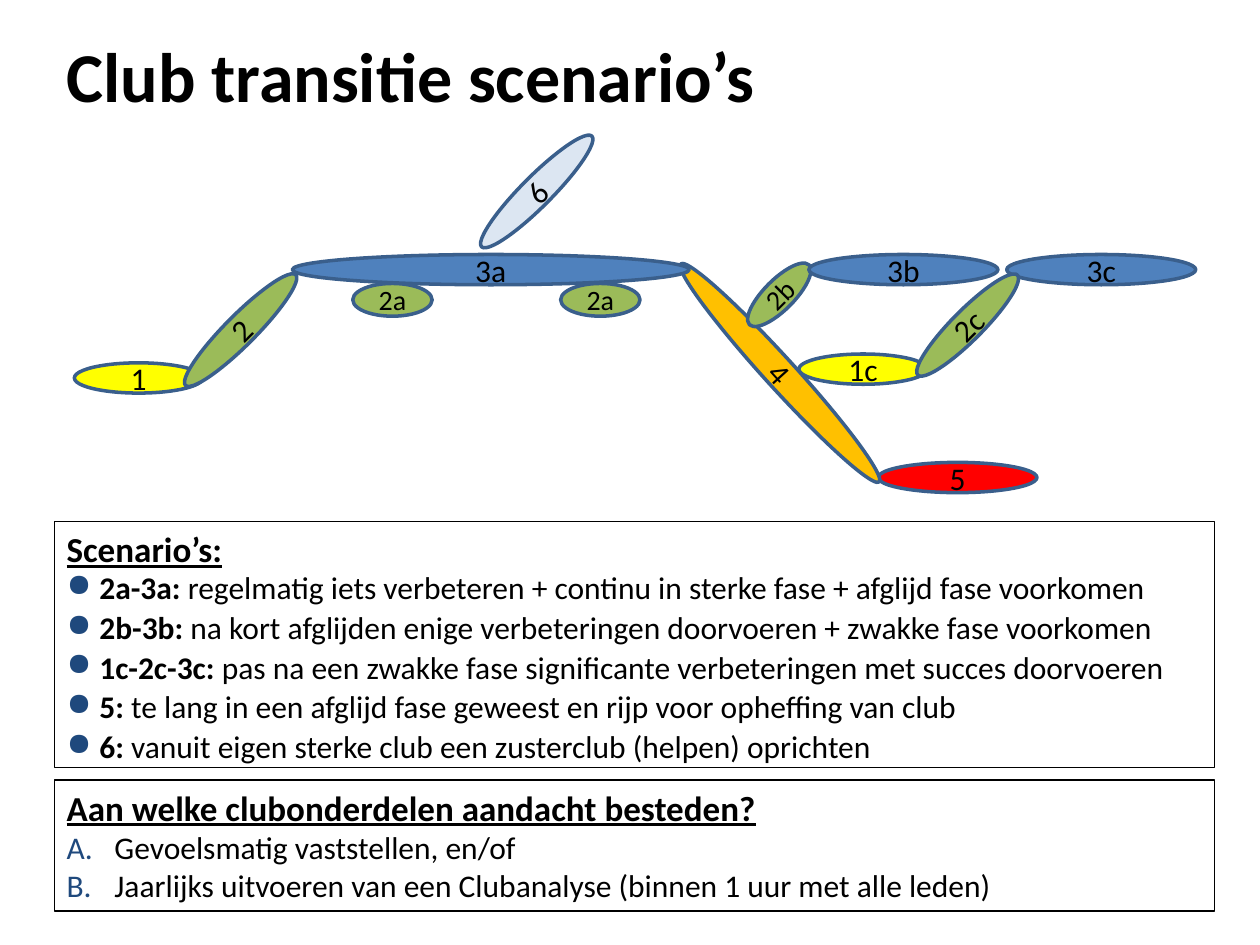
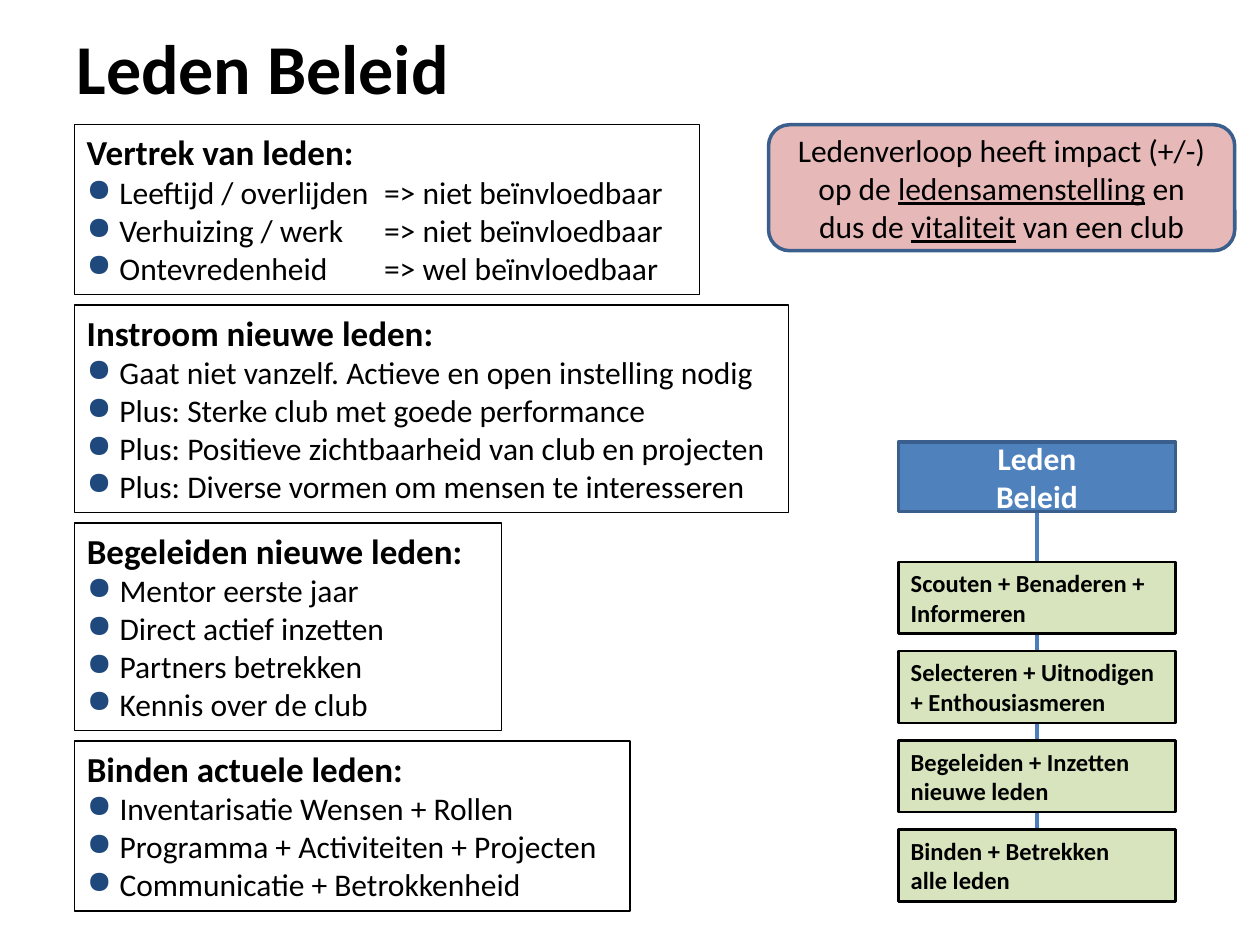
from dataclasses import dataclass

from lxml import etree
from pptx import Presentation
from pptx import util as u
from pptx.dml.color import RGBColor
from pptx.enum import shapes, text
from pptx.oxml import ns


@dataclass(frozen=True)
class Theme:
    font: str = "Calibri"
    ink: str = "000000"
    white: str = "FFFFFF"
    marker: str = "1F497D"
    edge: str = "3A5F8C"
    link: str = "4B7EBC"
    blue: str = "4F81BD"
    pale_blue: str = "DCE6F2"
    green: str = "9BBB59"
    pale_green: str = "D7E4BD"
    yellow: str = "FFFF00"
    orange: str = "FFC000"
    red: str = "FF0000"
    pink: str = "E6B9B8"
    title: int = 40
    heading: int = 20
    body: int = 18
    small: int = 16
    step: int = 14
    hairline: float = 0.75
    step_line: float = 1.5
    outline: float = 2
    link_line: float = 2.25


THEME = Theme()
SHAPE = shapes.MSO_SHAPE
WIDTH, HEIGHT = u.Inches(10), u.Inches(7.5)
COLUMN, ROW = WIDTH / 100, HEIGHT / 75  # grid of 100 columns by 75 rows
BULLET_INDENT, LETTER_INDENT, ARROW_TAB = 2.6, 3.8, 23.6


@dataclass
class Line:
    """One paragraph; each span is (words, style), with b for bold and u for underline."""
    spans: list
    size: float = THEME.body
    colour: str = THEME.ink
    marker: str = ""
    centred: bool = False


def heading(words, style="b"):
    return Line([(words, style)], THEME.heading)


def bullet(*spans):
    return Line(list(spans), marker="bullet")


def grid(left, top, width, height):
    """Turn columns and rows into slide lengths."""
    return [u.Emu(round(n * unit)) for n, unit in
            ((left, COLUMN), (top, ROW), (width, COLUMN), (height, ROW))]


def add_child(parent, tag, **attributes):
    child = etree.SubElement(parent, ns.qn(tag))
    for key, value in attributes.items():
        child.set(key, str(value))
    return child


def mark(para, kind):
    """Give a paragraph its bullet or letter, hanging indent and tab stop."""
    props = para._p.get_or_add_pPr()
    indent = round((BULLET_INDENT if kind == "bullet" else LETTER_INDENT) * COLUMN)
    props.set("marL", str(indent))
    props.set("indent", str(-indent))
    add_child(add_child(props, "a:buClr"), "a:srgbClr", val=THEME.marker)
    if kind == "bullet":
        add_child(props, "a:buChar", char="●")
    else:
        add_child(props, "a:buAutoNum", type="alphaUcPeriod")
    if "\t" in "".join(span.text for span in para.runs):
        add_child(add_child(props, "a:tabLst"), "a:tab",
                  pos=round(ARROW_TAB * COLUMN), algn="l")


def write(box, lines, anchor=text.MSO_ANCHOR.TOP, wrap=True):
    frame = box.text_frame
    frame.word_wrap = wrap
    frame.vertical_anchor = anchor
    for index, line in enumerate(lines):
        para = frame.paragraphs[0] if index == 0 else frame.add_paragraph()
        para.alignment = text.PP_ALIGN.CENTER if line.centred else text.PP_ALIGN.LEFT
        for words, style in line.spans:
            span = para.add_run()
            span.text = words
            span.font.name = THEME.font
            span.font.size = u.Pt(line.size)
            span.font.bold = "b" in style
            span.font.underline = "u" in style
            span.font.color.rgb = RGBColor.from_string(line.colour)
        if line.marker:
            mark(para, line.marker)


def add_text(page, area, lines, anchor=text.MSO_ANCHOR.TOP):
    write(page.shapes.add_textbox(*grid(*area)), lines, anchor)


def add_title(page, area, words):
    add_text(page, area, [Line([(words, "b")], THEME.title)], text.MSO_ANCHOR.MIDDLE)


def add_box(page, kind, area, fill=None, line=THEME.edge, weight=THEME.outline):
    box = page.shapes.add_shape(kind, *grid(*area))
    box.shadow.inherit = False
    if fill:
        box.fill.solid()
        box.fill.fore_color.rgb = RGBColor.from_string(fill)
    else:
        box.fill.background()
    box.line.color.rgb = RGBColor.from_string(line)
    box.line.width = u.Pt(weight)
    return box


def add_panel(page, area, lines):
    write(add_box(page, SHAPE.RECTANGLE, area, None, THEME.ink, THEME.hairline), lines)


def add_phase(page, label, area, fill, angle=0, size=THEME.body):
    phase = add_box(page, SHAPE.OVAL, area, fill)
    phase.rotation = angle
    write(phase, [Line([(label, "")], size, centred=True)],
          text.MSO_ANCHOR.MIDDLE, wrap=False)


def add_link(page):
    """Add a straight connector, to be joined to boxes drawn above it."""
    link = page.shapes.add_connector(shapes.MSO_CONNECTOR.STRAIGHT, 0, 0, 0, 0)
    link.line.color.rgb = RGBColor.from_string(THEME.link)
    link.line.width = u.Pt(THEME.link_line)
    add_child(link._element.spPr, "a:effectLst")
    return link


def build_scenarios(page):
    add_title(page, (4.3, 1.3, 69.3, 9.2), "Club transitie scenario’s")
    thick, rise, fall = 2.4, 314.9, 47.7
    strong_top = 20.2
    phases = [
        ("5", 69.7, 36.7, 12.6, THEME.red, 0),
        ("3c", 79.9, strong_top, 15, THEME.blue, 0),
        ("1c", 63.4, 28.1, 10.2, THEME.yellow, 0),
        ("2c", 71.2, 24.6, 11.2, THEME.green, rise),
        ("6", 36.4, 14, 12.4, THEME.pale_blue, rise),
        ("4", 50.2, 28.4, 23.4, THEME.orange, fall),
        ("1", 5.9, 28.8, 10.2, THEME.yellow, 0),
        ("2", 12.9, 25, 12.4, THEME.green, rise),
        ("3a", 23.2, strong_top, 31.5, THEME.blue, 0),
    ]
    for label, left, top, width, fill, angle in phases:
        add_phase(page, label, (left, top, width, thick), fill, angle)
    add_phase(page, "2b", (58.5, 22.2, 6.7, thick), THEME.green, rise, THEME.small)
    add_phase(page, "3b", (64.2, strong_top, 15, thick), THEME.blue)
    for left in (44.5, 28):
        add_phase(page, "2a", (left, 22.5, 6.3, 2.6), THEME.green, size=THEME.small)

    left, width = 4.3, 92.1
    scenarios = [
        ("2a-3a:", "regelmatig iets verbeteren + continu in sterke fase + afglijd fase voorkomen"),
        ("2b-3b:", "na kort afglijden enige verbeteringen doorvoeren + zwakke fase voorkomen"),
        ("1c-2c-3c:", "pas na een zwakke fase significante verbeteringen met succes doorvoeren"),
        ("5:", "te lang in een afglijd fase geweest en rijp voor opheffing van club"),
        ("6:", "vanuit eigen sterke club een zusterclub (helpen) oprichten"),
    ]
    for index, (phase, outcome) in enumerate(scenarios):
        add_text(page, (left, 44.6 + 3.15 * index, width, 4),
                 [bullet((phase + " ", "b"), (outcome, ""))])
    add_panel(page, (left, 41.4, width, 19.5), [heading("Scenario’s:", "bu")])
    answers = ["Gevoelsmatig vaststellen, en/of",
               "Jaarlijks uitvoeren van een Clubanalyse (binnen 1 uur met alle leden)"]
    add_panel(page, (left, 61.9, width, 10.4),
              [heading("Aan welke clubonderdelen aandacht besteden?", "bu")]
              + [Line([(answer, "")], marker="letter") for answer in answers])


def build_topics(page):
    topics = [
        ("Vertrek van leden:", 49.6,
         ["Leeftijd / overlijden\t=> niet beïnvloedbaar",
          "Verhuizing / werk\t=> niet beïnvloedbaar",
          "Ontevredenheid\t=> wel beïnvloedbaar"]),
        ("Instroom nieuwe leden:", 56.7,
         ["Gaat niet vanzelf. Actieve en open instelling nodig",
          "Plus: Sterke club met goede performance",
          "Plus: Positieve zichtbaarheid van club en projecten",
          "Plus: Diverse vormen om mensen te interesseren"]),
        ("Begeleiden nieuwe leden:", 33.9,
         ["Mentor eerste jaar", "Direct actief inzetten",
          "Partners betrekken", "Kennis over de club"]),
        ("Binden actuele leden:", 44.1,
         ["Inventarisatie Wensen + Rollen",
          "Programma + Activiteiten + Projecten",
          "Communicatie + Betrokkenheid"]),
    ]
    top, gap = 9.9, 0.8
    for name, width, points in topics:
        height = 4.5 + 3 * len(points)
        add_panel(page, (5.9, top, width, height),
                  [heading(name)] + [bullet((point, "")) for point in points])
        top += height + gap


def build_steps(page):
    left, width = 71.3, 22
    link = add_link(page)
    policy = add_box(page, SHAPE.RECTANGLE, (left, 35.1, width, 5.5), THEME.blue)
    write(policy, [Line([(word, "b")], colour=THEME.white, centred=True)
                   for word in ("Leden", "Beleid")], text.MSO_ANCHOR.MIDDLE)
    steps = [["Scouten + Benaderen +", "Informeren"],
             ["Selecteren + Uitnodigen + Enthousiasmeren"],
             ["Begeleiden + Inzetten", "nieuwe leden"],
             ["Binden + Betrekken", "alle leden"]]
    for index, step in enumerate(steps):
        box = add_box(page, SHAPE.RECTANGLE, (left, 44.6 + 7.08 * index, width, 5.7),
                      THEME.pale_green, THEME.ink, THEME.step_line)
        write(box, [Line([(words, "b")], THEME.step) for words in step])
    link.begin_connect(policy, 2)
    link.end_connect(box, 0)


def build_policy(page):
    add_title(page, (5.1, 2.1, 57.5, 6.3), "Leden Beleid")
    build_topics(page)
    build_steps(page)
    callout = add_box(page, SHAPE.ROUNDED_RECTANGLE, (61, 9.9, 37, 10), THEME.pink)
    write(callout, [
        Line([("Ledenverloop heeft impact (+/-) op de ", ""),
              ("ledensamenstelling", "u"), (" en", "")], centred=True),
        Line([("dus de ", ""), ("vitaliteit", "u"), (" van een club", "")], centred=True),
    ], text.MSO_ANCHOR.MIDDLE)


def main():
    deck = Presentation()
    deck.slide_width, deck.slide_height = WIDTH, HEIGHT
    blank = deck.slide_layouts[6]
    for build in (build_scenarios, build_policy):
        build(deck.slides.add_slide(blank))
    deck.save("out.pptx")


if __name__ == "__main__":
    main()
